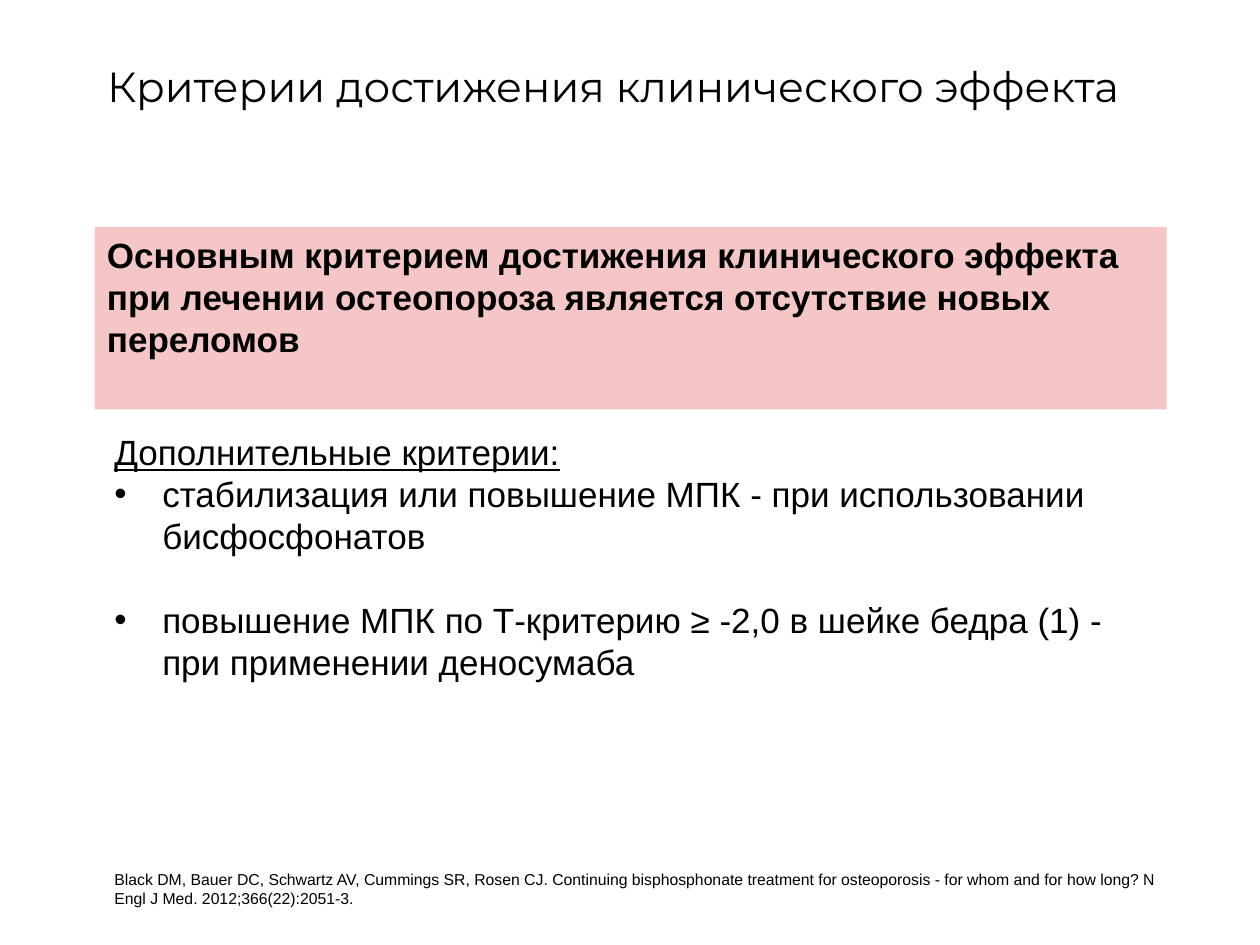
from lxml import etree
from pptx import Presentation, util as u
from pptx.dml.color import RGBColor
from pptx.enum import shapes, text
from pptx.oxml.ns import qn

THEME = {
    "ink": RGBColor.from_string("000000"),
    "pink": RGBColor.from_string("F4C7C6"),
    "white": RGBColor.from_string("FFFFFF"),
    "head": {"name": "Montserrat", "size": u.Pt(24), "bold": False},
    "key": {"name": "Arial", "size": u.Pt(20), "bold": True},
    "body": {"name": "Arial", "size": u.Pt(20)},
    "lead": {"name": "Arial", "size": u.Pt(20), "underline": True},
    "cite": {"name": "Arial", "size": u.Pt(9)},
}


class Page:
    def __init__(self, deck, theme):
        self.theme = theme
        self.slide = deck.slides.add_slide(deck.slide_layouts[5])

    def frame(self, shape, **form):
        base = {"word_wrap": True, "auto_size": text.MSO_AUTO_SIZE.NONE,
                "vertical_anchor": text.MSO_ANCHOR.TOP}
        for key, val in {**base, **form}.items():
            setattr(shape.text_frame, key, val)
        return shape.text_frame

    def add_text(self, para, words, style):
        para.alignment = text.PP_ALIGN.LEFT
        run = para.add_run()
        run.text = words
        for key, val in self.theme[style].items():
            setattr(run.font, key, val)
        run.font.color.rgb = self.theme["ink"]

    def title(self, box, words):
        shape = self.slide.shapes.title
        for key, val in zip(("left", "top", "width", "height"), box):
            setattr(shape, key, u.Inches(val))
        self.add_text(self.frame(shape).paragraphs[0], words, "head")

    def panel(self, box, words, style, fill, **form):
        shape = self.slide.shapes.add_shape(
            shapes.MSO_SHAPE.RECTANGLE, *map(u.Inches, box))
        shape.shadow.inherit = False
        shape.fill.solid()
        shape.fill.fore_color.rgb = self.theme[fill]
        shape.line.fill.background()
        self.add_text(self.frame(shape, **form).paragraphs[0], words, style)

    def items(self, box, rows):
        shape = self.slide.shapes.add_textbox(*map(u.Inches, box))
        frame = self.frame(shape)
        for num, (words, style, left, mark, gap) in enumerate(rows):
            para = frame.add_paragraph() if num else frame.paragraphs[0]
            if gap:
                para.space_before = u.Pt(gap)
            self.indent(para, left, mark)
            self.add_text(para, words, style)

    def indent(self, para, left, mark):
        props = para._p.get_or_add_pPr()
        props.set("marL", str(u.Inches(left)))
        props.set("indent", str(u.Inches(-left if mark else 0)))
        if mark:
            font = etree.SubElement(props, qn("a:buFont"))
            font.set("typeface", "Arial")
            etree.SubElement(props, qn("a:buChar")).set("char", mark)


def main():
    deck = Presentation()
    deck.slide_width, deck.slide_height = u.Inches(10), u.Inches(7.5)
    page = Page(deck, THEME)

    # Title
    page.title((0.75, 0.43, 8.84, 1.38),
               "Критерии достижения клинического эффекта")

    # Main criterion
    page.panel((0.75, 1.8, 8.51, 1.45),
               "Основным критерием достижения клинического эффекта при "
               "лечении остеопороза является отсутствие новых переломов",
               "key", "pink")

    # Reference
    page.panel((0.81, 6.54, 8.62, 0.91),
               "Black DM, Bauer DC, Schwartz AV, Cummings SR, Rosen CJ. "
               "Continuing bisphosphonate treatment for osteoporosis - for "
               "whom and for how long? N Engl J Med. 2012;366(22):2051-3.",
               "cite", "white", margin_top=u.Inches(0.36))

    # Further criteria: words, style, indent, bullet, space before
    page.items((0.81, 3.37, 8.36, 2.12), [
        ("Дополнительные критерии:", "lead", 0, None, 0),
        ("стабилизация или повышение МПК - при использовании "
         "бисфосфонатов", "body", 0.38, "•", 0),
        ("повышение МПК по Т-критерию ≥ -2,0 в шейке бедра (1) -",
         "body", 0.38, "•", 24),
        ("при применении деносумаба", "body", 0.38, None, 0),
    ])

    deck.save("out.pptx")


if __name__ == "__main__":
    main()
